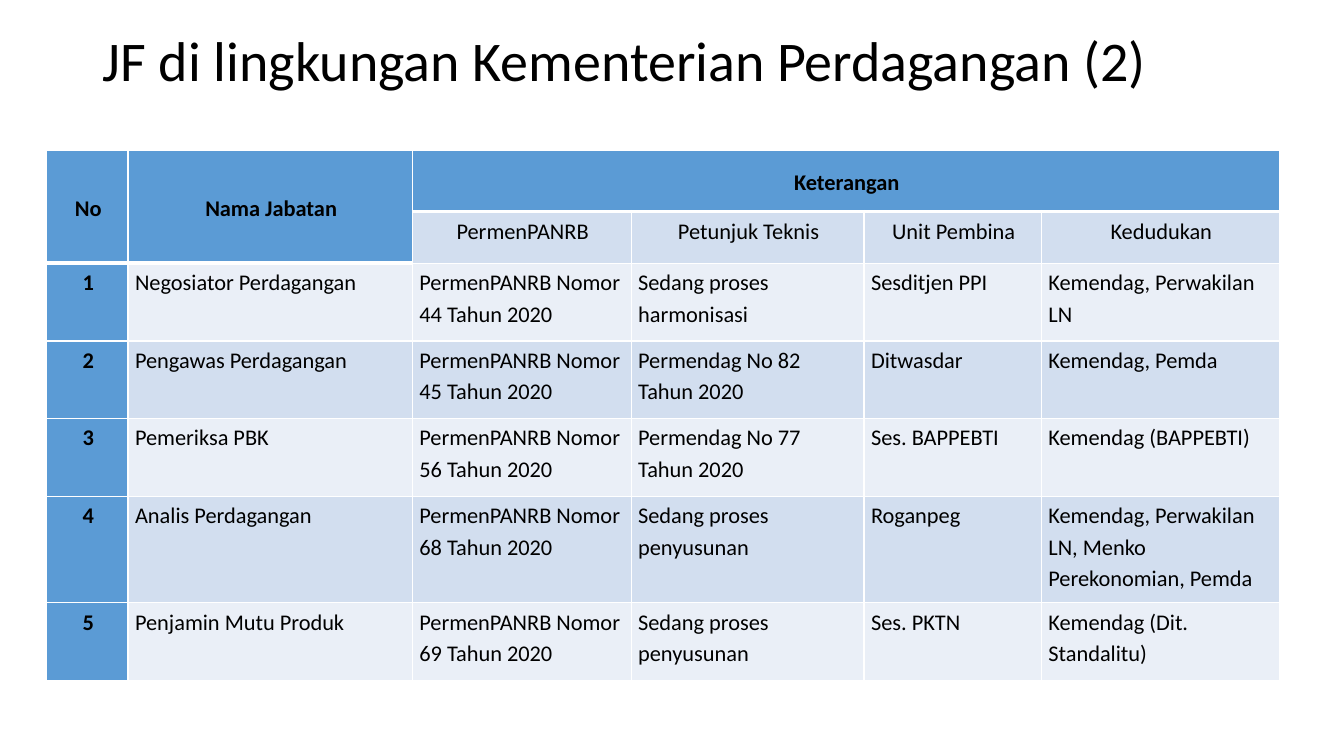
from dataclasses import dataclass

from lxml import etree
from pptx import Presentation
from pptx import util as u
from pptx.dml.color import RGBColor
from pptx.enum import text

FONT = "Calibri"
BLACK, WHITE = "000000", "FFFFFF"
HEADER_BLUE, BAND_DARK, BAND_LIGHT = "5B9BD5", "D2DEEF", "EAEFF7"
DRAWING = "http://schemas.openxmlformats.org/drawingml/2006/main"

# Grid of the table, in percent of the slide's width and height
COLUMN_SHARES = (6.08, 21.15, 16.28, 17.33, 13.2, 17.7)
ROW_SHARES = (8.13, 6.27) + (10.27,) * 5


@dataclass(frozen=True)
class Position:
    name: str
    regulation: str
    guideline: str
    unit: str
    placement: str


@dataclass(frozen=True)
class CellStyle:
    fill: str
    bold: bool = False
    centered: bool = True
    middle: bool = False
    bottom_line: float = 1


HEADING = CellStyle(HEADER_BLUE, bold=True, middle=True, bottom_line=3)
SUBHEADING = CellStyle(BAND_DARK)
NUMBER = CellStyle(HEADER_BLUE, bold=True)

HEADINGS = ("No", "Nama Jabatan", "Keterangan")
SUBHEADINGS = ("PermenPANRB", "Petunjuk Teknis", "Unit Pembina", "Kedudukan")
POSITIONS = (
    Position("Negosiator Perdagangan", "PermenPANRB Nomor 44 Tahun 2020",
             "Sedang proses harmonisasi", "Sesditjen PPI",
             "Kemendag, Perwakilan LN"),
    Position("Pengawas Perdagangan", "PermenPANRB Nomor 45 Tahun 2020",
             "Permendag No 82 Tahun 2020", "Ditwasdar", "Kemendag, Pemda"),
    Position("Pemeriksa PBK", "PermenPANRB Nomor 56 Tahun 2020",
             "Permendag No 77 Tahun 2020", "Ses. BAPPEBTI",
             "Kemendag (BAPPEBTI)"),
    Position("Analis Perdagangan", "PermenPANRB Nomor 68 Tahun 2020",
             "Sedang proses penyusunan", "Roganpeg",
             "Kemendag, Perwakilan LN, Menko Perekonomian, Pemda"),
    Position("Penjamin Mutu Produk", "PermenPANRB Nomor 69 Tahun 2020",
             "Sedang proses penyusunan", "Ses. PKTN",
             "Kemendag (Dit. Standalitu)"),
)

deck = Presentation()
deck.slide_width, deck.slide_height = u.Inches(13.33), u.Inches(7.5)


def across(percent: float) -> int:
    return round(deck.slide_width * percent / 100)


def down(percent: float) -> int:
    return round(deck.slide_height * percent / 100)


def color(value: str) -> RGBColor:
    return RGBColor.from_string(value)


def format_paragraph(paragraph, size: float, spacing: float,
                     centered: bool = False, bold: bool = False) -> None:
    paragraph.alignment = (text.PP_ALIGN.CENTER if centered
                           else text.PP_ALIGN.LEFT)
    paragraph.line_spacing = spacing
    font = paragraph.font
    font.name, font.size, font.bold = FONT, u.Pt(size), bold
    font.color.rgb = color(BLACK)


def add_borders(cell, bottom_line: float) -> None:
    properties = cell._tc.get_or_add_tcPr()
    for side, points in (("L", 1), ("R", 1), ("T", 1), ("B", bottom_line)):
        line = etree.SubElement(properties, f"{{{DRAWING}}}ln{side}",
                                w=str(u.Pt(points)))
        fill = etree.SubElement(line, f"{{{DRAWING}}}solidFill")
        etree.SubElement(fill, f"{{{DRAWING}}}srgbClr", val=WHITE)


def write_cell(cell, words: str, style: CellStyle) -> None:
    add_borders(cell, style.bottom_line)
    cell.fill.solid()
    cell.fill.fore_color.rgb = color(style.fill)
    cell.margin_left, cell.margin_right = u.Inches(0.07), u.Inches(0.05)
    cell.margin_top = u.Inches(0.1 if style.middle else 0.02)
    cell.margin_bottom = u.Inches(0.1)
    cell.vertical_anchor = (text.MSO_ANCHOR.MIDDLE if style.middle
                            else text.MSO_ANCHOR.TOP)
    cell.text = words
    paragraph = cell.text_frame.paragraphs[0]
    format_paragraph(paragraph, 16, 1.15, style.centered, style.bold)
    paragraph.space_after = u.Pt(10)


def add_title(slide, words: str) -> None:
    title = slide.shapes.title
    title.left, title.top = across(6.9), down(2.67)
    title.width, title.height = across(86.25), down(11.47)
    title.text = words
    frame = title.text_frame
    frame.auto_size = text.MSO_AUTO_SIZE.NONE
    frame.vertical_anchor = text.MSO_ANCHOR.MIDDLE
    format_paragraph(frame.paragraphs[0], 40, 0.9)


def add_positions_table(slide) -> None:
    table = slide.shapes.add_table(
        len(ROW_SHARES), len(COLUMN_SHARES), across(3.45), down(19.87),
        across(sum(COLUMN_SHARES)), down(sum(ROW_SHARES))).table
    for column, share in zip(table.columns, COLUMN_SHARES):
        column.width = across(share)
    for row, share in zip(table.rows, ROW_SHARES):
        row.height = down(share)

    # Two header rows, with merged headings
    for index in range(len(COLUMN_SHARES)):
        heading = HEADINGS[index] if index < len(HEADINGS) else ""
        write_cell(table.cell(0, index), heading, HEADING)
    for index in (0, 1):
        write_cell(table.cell(1, index), "", HEADING)
        table.cell(0, index).merge(table.cell(1, index))
    table.cell(0, 2).merge(table.cell(0, 5))
    for index, subheading in enumerate(SUBHEADINGS, 2):
        write_cell(table.cell(1, index), subheading, SUBHEADING)

    # One banded row per position
    for number, position in enumerate(POSITIONS, 1):
        band = CellStyle(BAND_LIGHT if number % 2 else BAND_DARK,
                         centered=False)
        write_cell(table.cell(number + 1, 0), str(number), NUMBER)
        details = (position.name, position.regulation, position.guideline,
                   position.unit, position.placement)
        for index, detail in enumerate(details, 1):
            write_cell(table.cell(number + 1, index), detail, band)


def main() -> None:
    slide = deck.slides.add_slide(deck.slide_layouts.get_by_name("Title Only"))
    add_title(slide, "JF di lingkungan Kementerian Perdagangan (2)")
    add_positions_table(slide)
    deck.save("out.pptx")


if __name__ == "__main__":
    main()
